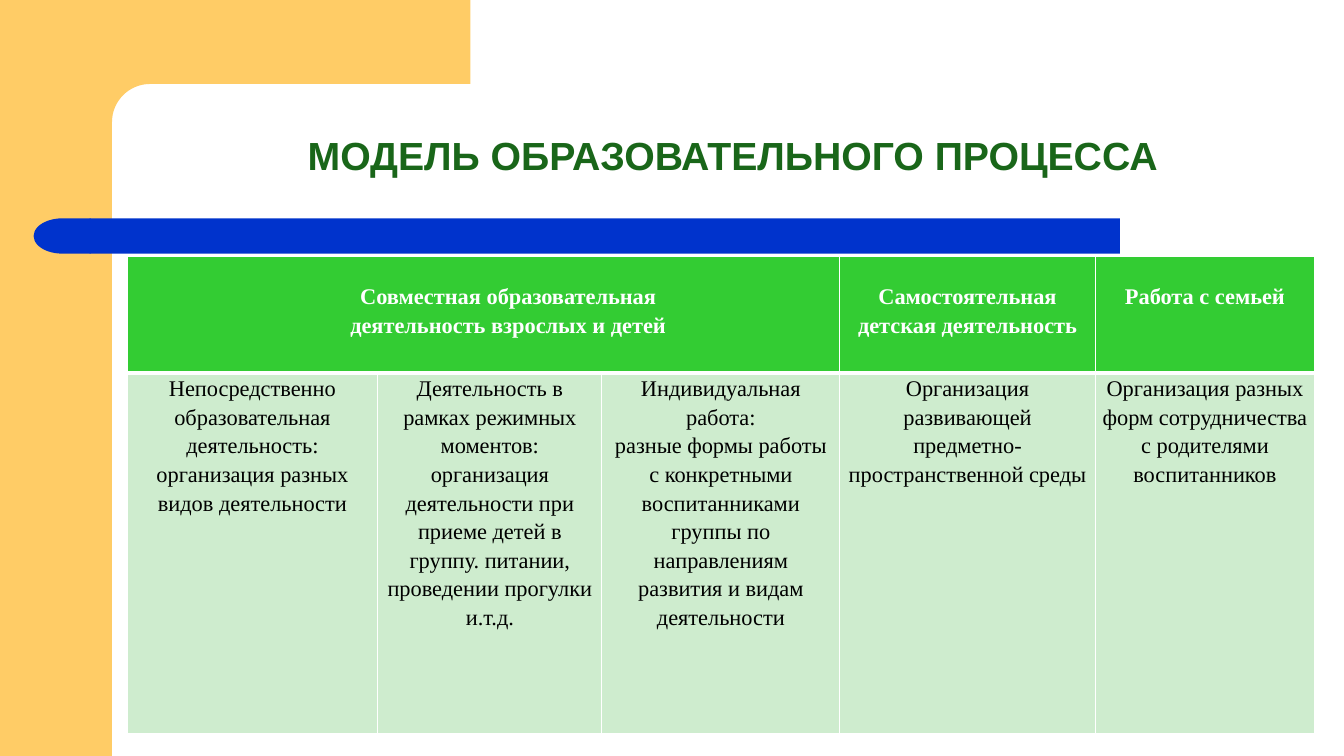
import math
import pptx
import pptx.util
import pptx.dml.color
import pptx.enum.shapes
import pptx.enum.text
import pptx.oxml
import pptx.oxml.ns

COLORS = {"sand": "FFCC66", "blue": "0033CC", "title": "196619", "head": "33CC33",
          "body": "CEECCE", "white": "FFFFFF", "black": "000000"}
SHAPES = pptx.enum.shapes.MSO_SHAPE

deck = pptx.Presentation()
deck.slide_width = pptx.util.Inches(13.33)
deck.slide_height = pptx.util.Inches(7.5)
slide = deck.slides.add_slide(deck.slide_layouts[6])


def grid(*steps):
    return [round(step * deck.slide_width / 120) for step in steps]


def write(frame, text, size=16, font="Times New Roman", color="black", bold=False,
          spacing=1.15, indent=0):
    frame.word_wrap = True
    for number, line in enumerate(text.split("\n")):
        paragraph = frame.paragraphs[0] if number == 0 else frame.add_paragraph()
        paragraph.alignment = pptx.enum.text.PP_ALIGN.CENTER
        paragraph.line_spacing = spacing
        if indent:
            paragraph._p.get_or_add_pPr().set("indent", str(pptx.util.Inches(indent)))
        run = paragraph.add_run()
        run.text = line
        run.font.name = font
        run.font.size = pptx.util.Pt(size)
        run.font.bold = bold
        run.font.color.rgb = pptx.dml.color.RGBColor.from_string(COLORS[color])


arc = [(13.4 - 3.4 * math.sin(angle), 10.9 - 3.4 * math.cos(angle))
       for angle in (step * math.pi / 32 for step in range(17))]
outline = [grid(*point) for point in [(42, 0), (42, 7.5), *arc, (10, 11.5), (6, 11.5), (6, 0)]]
corner_path = slide.shapes.build_freeform(*outline[0], scale=1.0)
corner_path.add_line_segments(outline[1:], close=True)

side_band = slide.shapes.add_shape(SHAPES.RECTANGLE, 0, 0, *grid(10), deck.slide_height)
corner = corner_path.convert_to_shape()
bar = slide.shapes.add_shape(SHAPES.RECTANGLE, *grid(8, 19.5, 92, 3.15))
bar_end = slide.shapes.add_shape(SHAPES.FLOWCHART_DELAY, *grid(3, 19.5, 5.1, 3.15))
bar_end.rotation = 180
for part, color in [(side_band, "sand"), (corner, "sand"), (bar, "blue"), (bar_end, "blue")]:
    part.shadow.inherit = False
    part.fill.solid()
    part.fill.fore_color.rgb = pptx.dml.color.RGBColor.from_string(COLORS[color])
    part.line.fill.background()

title = slide.shapes.add_textbox(*grid(25.4, 11.6, 81, 4.95)).text_frame
title.vertical_anchor = pptx.enum.text.MSO_ANCHOR.MIDDLE
write(title, "МОДЕЛЬ ОБРАЗОВАТЕЛЬНОГО ПРОЦЕССА ", size=28, font="Arial", color="title",
      bold=True, spacing=0.9)

headings = {
    0: "Совместная образовательная\nдеятельность взрослых и детей",
    3: "Самостоятельная\nдетская деятельность",
    4: "Работа с семьей",
}
activities = [
    "Непосредственно\nобразовательная деятельность:\nорганизация разных видов деятельности",
    "Деятельность в\nрамках режимных моментов:\nорганизация деятельности при приеме детей "
    "в группу. питании, проведении прогулки и.т.д.",
    "Индивидуальная работа:\nразные формы работы с конкретными воспитанниками группы "
    "по направлениям развития и видам деятельности",
    "Организация\nразвивающей предметно-пространственной среды",
    "Организация разных форм сотрудничества с родителями\nвоспитанников",
]
column_widths = grid(22.4, 20, 21.25, 22.8, 19.6)
row_heights = grid(10.45, 32.2)
model = slide.shapes.add_table(2, 5, *grid(11.34, 22.86), sum(column_widths),
                               sum(row_heights)).table
model.first_row = model.horz_banding = False
for column, width in zip(model.columns, column_widths):
    column.width = width
for row, height in zip(model.rows, row_heights):
    row.height = height
model.cell(0, 0).merge(model.cell(0, 2))

for row in range(2):
    for column in range(5):
        cell = model.cell(row, column)
        cell.margin_left = cell.margin_right = pptx.util.Inches(0.07)
        cell.margin_top = pptx.util.Inches(0 if row else 0.25)
        cell.margin_bottom = 0
        for side in "LRTB":
            middle_edge = (row, side) in [(0, "B"), (1, "T")]
            border = pptx.oxml.parse_xml(
                f'<a:ln{side} {pptx.oxml.ns.nsdecls("a")} '
                f'w="{pptx.util.Pt(3 if middle_edge else 1)}"><a:solidFill>'
                f'<a:srgbClr val="{COLORS["white"]}"/></a:solidFill></a:ln{side}>')
            cell._tc.get_or_add_tcPr().append(border)
        cell.fill.solid()
        cell.fill.fore_color.rgb = pptx.dml.color.RGBColor.from_string(
            COLORS["body" if row else "head"])
        if row:
            write(cell.text_frame, activities[column])
        elif column in headings:
            write(cell.text_frame, headings[column], color="white", bold=True,
                  indent=0 if column else 0.49)

deck.save("out.pptx")
